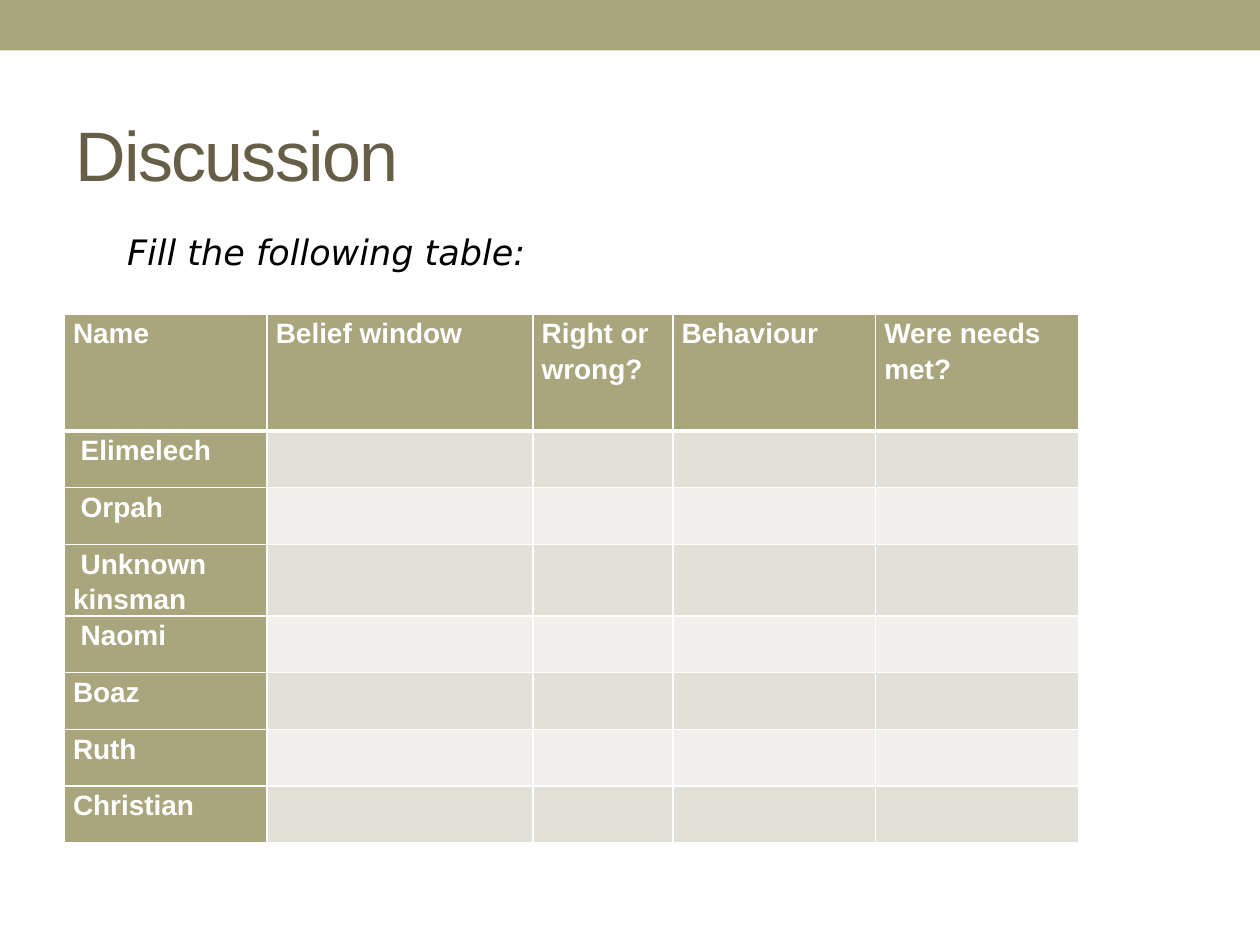
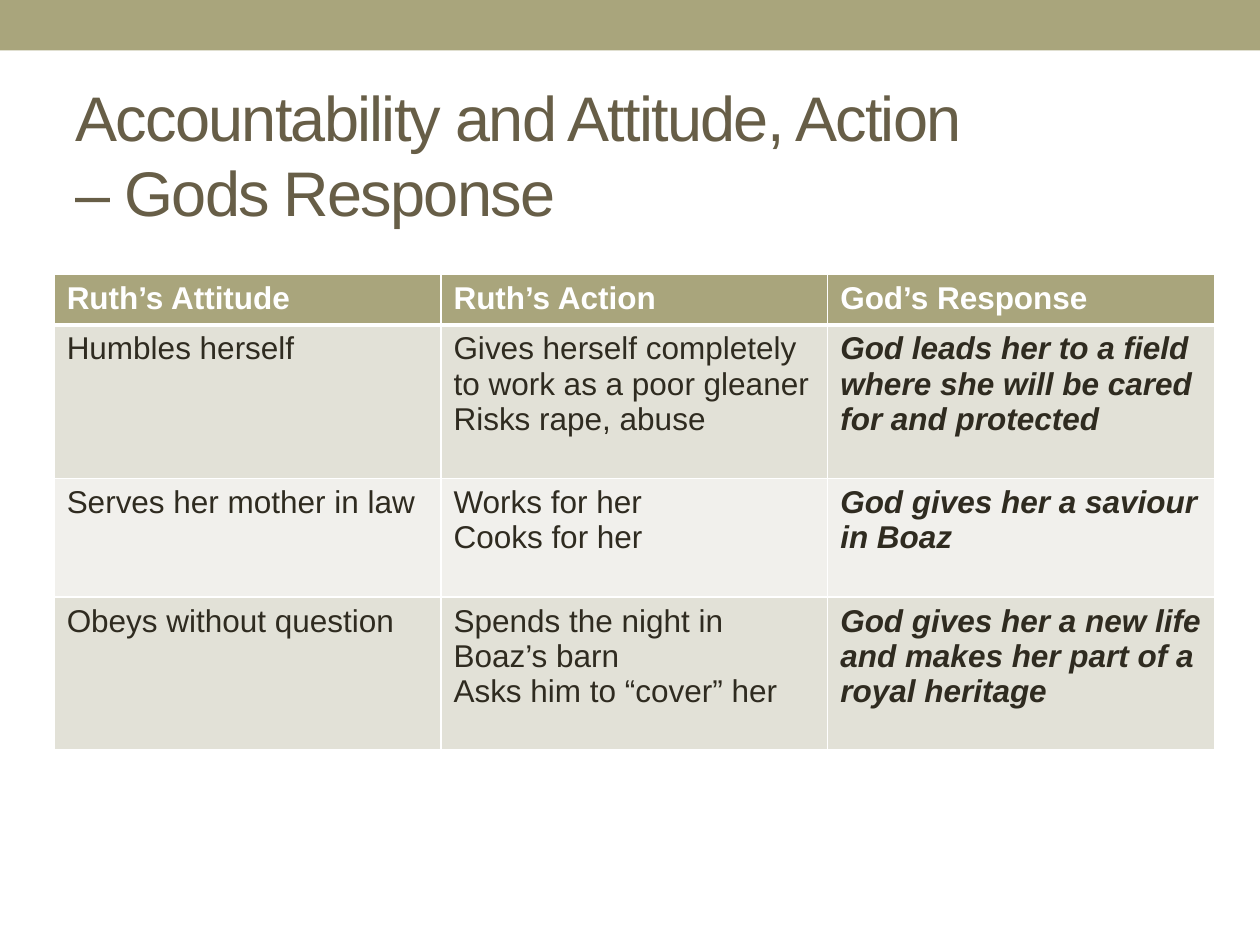
from lxml.etree import SubElement
from pptx import Presentation
from pptx.dml.color import RGBColor
from pptx.enum.shapes import MSO_SHAPE as Shape
from pptx.enum.text import MSO_ANCHOR as Anchor, MSO_AUTO_SIZE as AutoSize, PP_ALIGN as Align
from pptx.oxml.ns import qn
from pptx.util import Inches, Pt

COLORS = {
    "band": "A9A57C",
    "title": "675E47",
    "dark": "2F2B20",
    "row_odd": "E2E1D7",
    "row_even": "F1F0EC",
    "white": "FFFFFF",
    "black": "000000",
}
TITLE_ONLY = 5
HEADING = {"name": "Arial", "bold": True, "italic": False, "color": "white"}
PLAIN = {"name": "Arial", "bold": False, "italic": False, "color": "dark"}
RESPONSE = PLAIN | {"bold": True, "italic": True}
WORKSHEET_SPACING = {"line_spacing": 1.15, "space_after": Pt(6)}
WORKSHEET_MARGINS = {
    "margin_left": Inches(0.07),
    "margin_right": Inches(0.07),
    "margin_top": 0,
    "margin_bottom": 0,
}

WORKSHEET_HEADINGS = ["Name", "Belief window", "Right or wrong?", "Behaviour", "Were needs met?"]
PEOPLE = [" Elimelech", " Orpah", " Unknown kinsman", " Naomi", "Boaz", "Ruth", "Christian"]
RESPONSE_ROWS = [
    ["Ruth’s Attitude", "Ruth’s Action", "God’s Response"],
    [
        "Humbles herself",
        "Gives herself completely to work as a poor gleaner\nRisks rape, abuse",
        "God leads her to a field where she will be cared for and protected",
    ],
    [
        "Serves her mother in law",
        "Works for her\nCooks for her",
        "God gives her a saviour in Boaz",
    ],
    [
        "Obeys without question",
        "Spends the night in Boaz’s barn\nAsks him to “cover” her",
        "God gives her a new life and makes her part of a royal heritage",
    ],
]


def color(name):
    """Return the named palette colour."""
    return RGBColor.from_string(COLORS[name])


def apply_format(target, values):
    """Set each attribute named in the format values."""
    for name, value in values.items():
        setattr(target, name, value)


def format_font(font, values, size):
    """Set a font's size, colour and other format values."""
    font.size = Pt(size)
    font.color.rgb = color(values["color"])
    apply_format(font, {name: value for name, value in values.items() if name != "color"})


def add_band(slide):
    """Add the coloured band along the top of the slide."""
    band = slide.shapes.add_shape(Shape.RECTANGLE, 0, 0, Inches(10), Inches(0.4))
    band.shadow.inherit = False
    band.fill.solid()
    band.fill.fore_color.rgb = color("band")
    band.line.fill.background()


def set_title(slide, lines, size):
    """Place the title and write its lines with tight letter spacing."""
    title = slide.shapes.title
    apply_format(title, {"left": Inches(0.5), "top": Inches(0.68),
                         "width": Inches(9), "height": Inches(1.08)})
    apply_format(title.text_frame, {"vertical_anchor": Anchor.MIDDLE,
                                    "auto_size": AutoSize.NONE, "word_wrap": True})
    paragraph = title.text_frame.paragraphs[0]
    paragraph.alignment = Align.LEFT
    for index, line in enumerate(lines):
        if index:
            paragraph.add_line_break()
        run = paragraph.add_run()
        run.text = line
        format_font(run.font, {"name": "Arial", "color": "title"}, size)
        run.font._element.set("spc", "-100")


def add_slide(presentation, title_lines, title_size):
    """Add a slide with the shared band and title."""
    slide = presentation.slides.add_slide(presentation.slide_layouts[TITLE_ONLY])
    add_band(slide)
    set_title(slide, title_lines, title_size)
    return slide


def add_instruction(slide, text):
    """Add the italic instruction above the worksheet."""
    box = slide.shapes.add_textbox(Inches(0.91), Inches(1.78), Inches(3.42), Inches(0.44))
    apply_format(box.text_frame, {"word_wrap": False, "vertical_anchor": Anchor.MIDDLE})
    run = box.text_frame.paragraphs[0].add_run()
    run.text = text
    format_font(run.font, {"name": "DejaVu Sans", "italic": True, "color": "black"}, 20)


def set_borders(cell, widths):
    """Draw white cell borders with the given widths in points."""
    properties = cell._tc.get_or_add_tcPr()
    for side, width in widths.items():
        line = SubElement(properties, qn(f"a:ln{side}"), w=str(Pt(width)))
        fill = SubElement(line, qn("a:solidFill"))
        SubElement(fill, qn("a:srgbClr"), val=COLORS["white"])


def write_cell(cell, text, font, size, spacing):
    """Write one paragraph for each line of the cell's text."""
    cell.text = text
    for paragraph in cell.text_frame.paragraphs:
        apply_format(paragraph, spacing)
        for run in paragraph.runs:
            format_font(run.font, font, size)


def add_table(slide, rows, position, widths, heights, column_fonts, size,
              name_column=False, margins={}, spacing={}):
    """Add a banded table with a heading row and an optional name column."""
    frame = slide.shapes.add_table(len(rows), len(widths), *map(Inches, position),
                                   Inches(sum(widths)), Inches(sum(heights)))
    table = frame.table
    apply_format(table, {"first_row": False, "horz_banding": False})
    for column, width in zip(table.columns, widths):
        column.width = Inches(width)
    for row, height in zip(table.rows, heights):
        row.height = Inches(height)
    for row_index, texts in enumerate(rows):
        for column_index, text in enumerate(texts):
            cell = table.cell(row_index, column_index)
            is_heading = row_index == 0 or (name_column and column_index == 0)
            set_borders(cell, {"L": 1, "R": 1, "T": 3 if row_index == 1 else 1,
                               "B": 3 if row_index == 0 else 1})
            cell.fill.solid()
            body_fill = "row_odd" if row_index % 2 else "row_even"
            cell.fill.fore_color.rgb = color("band" if is_heading else body_fill)
            apply_format(cell, margins)
            if text:
                font = HEADING if is_heading else column_fonts[column_index]
                write_cell(cell, text, font, size, spacing)


def main():
    """Build and save the two slides."""
    presentation = Presentation()
    apply_format(presentation, {"slide_width": Inches(10), "slide_height": Inches(7.5)})

    discussion = add_slide(presentation, ["Discussion"], 40)
    worksheet = [WORKSHEET_HEADINGS] + [[person] + [""] * 4 for person in PEOPLE]
    heights = [0.93] + [0.45] * len(PEOPLE)
    add_table(discussion, worksheet, (0.51, 2.49), [1.61, 2.11, 1.11, 1.61, 1.61], heights,
              [PLAIN] * 5, 16, name_column=True,
              margins=WORKSHEET_MARGINS, spacing=WORKSHEET_SPACING)
    add_instruction(discussion, "Fill the following table:")

    response = add_slide(presentation,
                         ["Accountability and Attitude, Action ", "– Gods Response"], 36)
    add_table(response, RESPONSE_ROWS, (0.43, 2.18), [3.07] * 3, [0.4, 1.22, 0.94, 1.21],
              [PLAIN, PLAIN, RESPONSE], 18)

    presentation.save("out.pptx")


if __name__ == "__main__":
    main()
